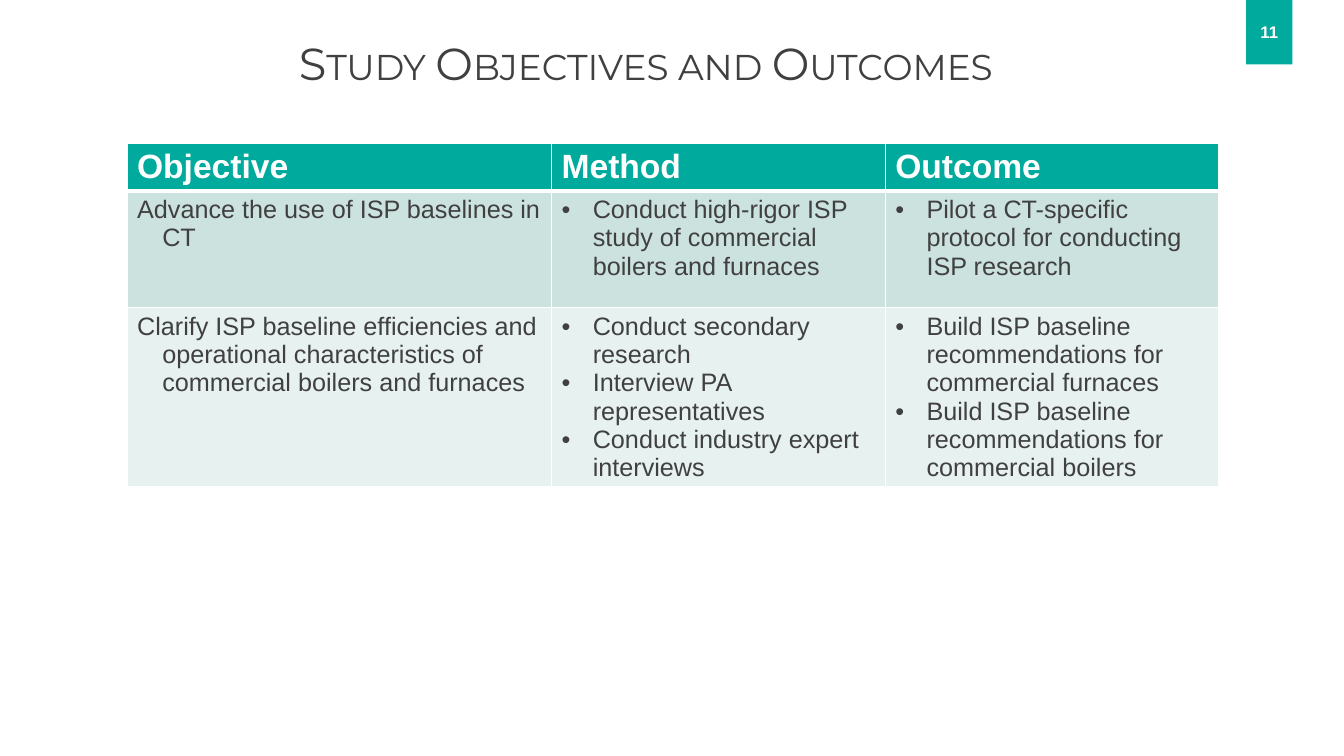
import pptx
import pptx.dml.color
import pptx.enum.shapes
import pptx.enum.text
import pptx.oxml
import pptx.oxml.ns
import pptx.util
from pptx.util import Inches

# Content
TITLE = "Study Objectives and Outcomes"
PAGE_NUMBER = "11"
HEADERS = ["Objective", "Method", "Outcome"]
ROWS = [
    [
        ["Advance the use of ISP baselines in CT"],
        ["Conduct high-rigor ISP study of commercial boilers and furnaces"],
        ["Pilot a CT-specific protocol for conducting ISP research"],
    ],
    [
        ["Clarify ISP baseline efficiencies and operational characteristics "
         "of commercial boilers and furnaces"],
        ["Conduct secondary research",
         "Interview PA representatives",
         "Conduct industry expert interviews"],
        ["Build ISP baseline recommendations for commercial furnaces",
         "Build ISP baseline recommendations for commercial boilers"],
    ],
]

# Style
TEAL, WHITE, DARK = "00AA9D", "FFFFFF", "404041"
ROW_FILLS = ["CCE2DF", "E7F1EF"]
COLUMN_WIDTHS = [4.21, 3.31, 3.31]
ROW_HEIGHTS = [0.41, 1.16, 1.38]
TABLE_LEFT, TABLE_TOP = 1.26, 1.42
PLAIN_INDENT, BULLET_INDENT = 0.25, 0.31
CENTER = pptx.enum.text.PP_ALIGN.CENTER
NAMESPACE = pptx.oxml.ns.nsdecls("a")


def color(value):
    return pptx.dml.color.RGBColor.from_string(value)


def paint(target, value):
    target.fill.solid()
    target.fill.fore_color.rgb = color(value)


def write(frame, lines, size, ink, font="Arial", bold=False, align=None,
          spacing=None, hanging=0, bullet=False, small_caps=False):
    """Fill a text frame with one paragraph per line."""
    frame.word_wrap = True
    for index, line in enumerate(lines):
        paragraph = frame.paragraphs[0] if index == 0 else frame.add_paragraph()
        if align is not None:
            paragraph.alignment = align
        if spacing:
            paragraph.line_spacing = spacing
        if hanging:
            properties = paragraph._p.get_or_add_pPr()
            properties.set("marL", str(Inches(hanging)))
            properties.set("indent", str(-Inches(hanging)))
            if bullet:
                properties.append(pptx.oxml.parse_xml(
                    f'<a:buFont {NAMESPACE} typeface="Arial"/>'))
                properties.append(pptx.oxml.parse_xml(
                    f'<a:buChar {NAMESPACE} char="•"/>'))
        run = paragraph.add_run()
        run.text = line
        run.font.name = font
        run.font.size = pptx.util.Pt(size)
        run.font.bold = bold
        run.font.color.rgb = color(ink)
        if small_caps:
            run._r.get_or_add_rPr().set("cap", "small")


def set_borders(cell, bottom_width):
    """White borders; they go before the cell fill in the XML."""
    properties = cell._tc.get_or_add_tcPr()
    widths = {"lnL": 1, "lnR": 1, "lnT": 1, "lnB": bottom_width}
    for position, (side, width) in enumerate(widths.items()):
        properties.insert(position, pptx.oxml.parse_xml(
            f'<a:{side} {NAMESPACE} w="{pptx.util.Pt(width)}"><a:solidFill>'
            f'<a:srgbClr val="{WHITE}"/></a:solidFill></a:{side}>'))


def add_box(slide, left, top, width, height, fill, anchor):
    shape = slide.shapes.add_shape(
        pptx.enum.shapes.MSO_SHAPE.RECTANGLE,
        Inches(left), Inches(top), Inches(width), Inches(height))
    shape.shadow.inherit = False
    shape.line.fill.background()
    paint(shape, fill)
    shape.text_frame.vertical_anchor = anchor
    return shape


def add_objectives_table(slide):
    table = slide.shapes.add_table(
        len(ROW_HEIGHTS), len(COLUMN_WIDTHS),
        Inches(TABLE_LEFT), Inches(TABLE_TOP),
        Inches(sum(COLUMN_WIDTHS)), Inches(sum(ROW_HEIGHTS))).table
    for column, width in zip(table.columns, COLUMN_WIDTHS):
        column.width = Inches(width)
    for row, height in zip(table.rows, ROW_HEIGHTS):
        row.height = Inches(height)

    # Header row
    for column_index, header in enumerate(HEADERS):
        cell = table.cell(0, column_index)
        paint(cell, TEAL)
        set_borders(cell, bottom_width=3)
        write(cell.text_frame, [header], 24, WHITE, bold=True)

    # Body rows: plain objective, bulleted method and outcome
    for row_index, (row, fill) in enumerate(zip(ROWS, ROW_FILLS), start=1):
        for column_index, lines in enumerate(row):
            cell = table.cell(row_index, column_index)
            bullet = column_index > 0
            paint(cell, fill)
            set_borders(cell, bottom_width=1)
            if row_index == 1:
                cell._tc.tcPr.find(pptx.oxml.ns.qn("a:lnT")).set(
                    "w", str(pptx.util.Pt(3)))
            write(cell.text_frame, lines, 18, DARK, bullet=bullet,
                  hanging=BULLET_INDENT if bullet else PLAIN_INDENT)


def main():
    presentation = pptx.Presentation()
    presentation.slide_width = Inches(13.33)
    presentation.slide_height = Inches(7.5)
    slide = presentation.slides.add_slide(presentation.slide_layouts[6])
    anchors = pptx.enum.text.MSO_ANCHOR

    # Title
    title = add_box(slide, 0.39, 0.33, 12.03, 0.61, WHITE, anchors.BOTTOM)
    write(title.text_frame, [TITLE], 32, DARK, font="Montserrat",
          align=CENTER, spacing=0.9, small_caps=True)

    add_objectives_table(slide)

    # Page number tag
    tag = add_box(slide, 12.36, -0.01, 0.46, 0.65, TEAL, anchors.MIDDLE)
    write(tag.text_frame, [PAGE_NUMBER], 12, WHITE, bold=True, align=CENTER)

    presentation.save("out.pptx")


if __name__ == "__main__":
    main()
